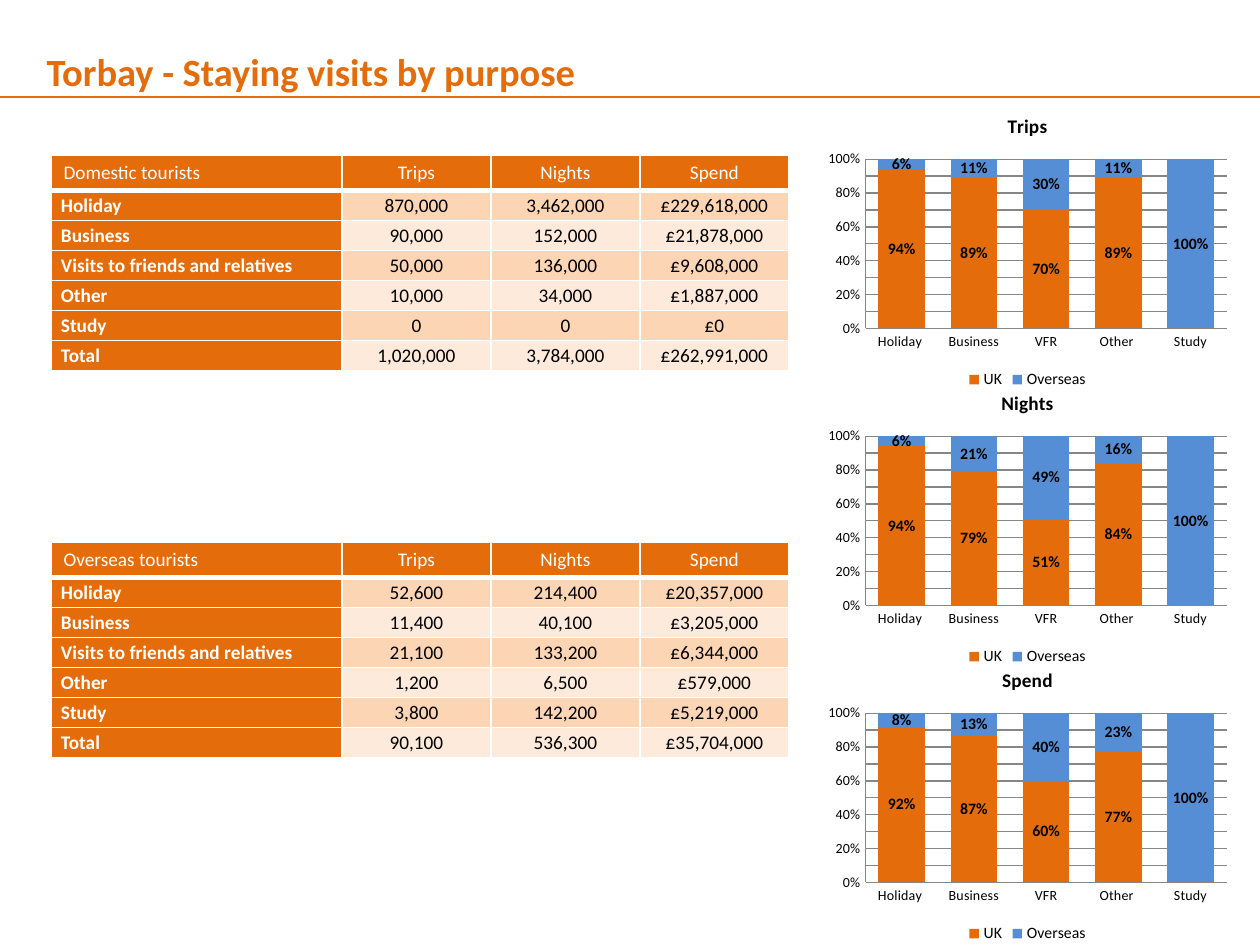
import dataclasses
import pptx
import pptx.chart.data
import pptx.dml.color
import pptx.enum.chart
import pptx.enum.shapes
import pptx.enum.text
import pptx.oxml
import pptx.oxml.ns
import pptx.util
from lxml import etree

SCALE = 914400 / 126


@dataclasses.dataclass(frozen=True)
class Theme:
    font: str = "Calibri"
    orange: str = "E46C0A"
    blue: str = "558ED5"
    peach: str = "FCD5B5"
    cream: str = "FDEADA"
    white: str = "FFFFFF"
    black: str = "000000"
    grey: str = "868686"
    title: int = 22
    body: int = 11
    label: int = 9
    axis: int = 8


THEME = Theme()
KINDS = ["Holiday", "Business", "Visits to friends and relatives",
         "Other", "Study", "Total"]
CATS = ["Holiday ", "Business", "VFR", "Other ", "Study"]
HOME = [("870,000", "3,462,000", "£229,618,000"),
        ("90,000", "152,000", "£21,878,000"),
        ("50,000", "136,000", "£9,608,000"),
        ("10,000", "34,000", "£1,887,000"),
        ("0", "0", "£0"),
        ("1,020,000", "3,784,000", "£262,991,000")]
ABROAD = [("52,600", "214,400", "£20,357,000"),
          ("11,400", "40,100", "£3,205,000"),
          ("21,100", "133,200", "£6,344,000"),
          ("1,200", "6,500", "£579,000"),
          ("3,800", "142,200", "£5,219,000"),
          ("90,100", "536,300", "£35,704,000")]
# UK share by purpose; overseas is the rest
SHARES = {"Trips": [0.94, 0.89, 0.7, 0.89, 0],
          "Nights": [0.94, 0.79, 0.51, 0.84, 0],
          "Spend": [0.92, 0.87, 0.6, 0.77, 0]}


def px(num):
    return pptx.util.Emu(round(num * SCALE))


def rgb(color):
    return pptx.dml.color.RGBColor.from_string(color)


def style(font, size, color=THEME.black, bold=False):
    font.name = THEME.font
    font.size = pptx.util.Pt(size)
    font.bold = bold
    font.color.rgb = rgb(color)


def add_title(slide, text):
    title = slide.shapes.title
    title.left, title.top, title.width, title.height = map(px, (34, 32, 1201, 69))
    frame = title.text_frame
    frame.text = text
    frame.word_wrap = True
    frame.auto_size = pptx.enum.text.MSO_AUTO_SIZE.SHAPE_TO_FIT_TEXT
    frame.vertical_anchor = pptx.enum.text.MSO_ANCHOR.TOP
    para = frame.paragraphs[0]
    para.alignment = pptx.enum.text.PP_ALIGN.LEFT
    para.line_spacing = 1.2
    style(para.runs[0].font, THEME.title, THEME.orange, True)


def add_rule(slide, y):
    line = slide.shapes.add_connector(
        pptx.enum.shapes.MSO_CONNECTOR.STRAIGHT, px(0), px(y), px(1260), px(y))
    line.line.color.rgb = rgb(THEME.orange)
    line.line.width = pptx.util.Pt(0.75)
    etree.SubElement(line._element.spPr, pptx.oxml.ns.qn("a:effectLst"))


def add_border(cell, head):
    props = cell._tc.get_or_add_tcPr()
    for spot, side in enumerate(("lnL", "lnR", "lnT", "lnB")):
        width = pptx.util.Pt(3 if head and side == "lnB" else 1)
        edge = etree.Element(pptx.oxml.ns.qn("a:" + side), w=str(width))
        fill = etree.SubElement(edge, pptx.oxml.ns.qn("a:solidFill"))
        etree.SubElement(fill, pptx.oxml.ns.qn("a:srgbClr"), val=THEME.white)
        props.insert(spot, edge)


def fill_cell(cell, text, row, col):
    head, side = row == 0, col == 0
    cell.text = text
    cell.vertical_anchor = pptx.enum.text.MSO_ANCHOR.MIDDLE
    if not head:
        cell.margin_left = px(10 if side else 1)
        cell.margin_right = cell.margin_top = px(1)
        cell.margin_bottom = 0
    para = cell.text_frame.paragraphs[0]
    if not side:
        para.alignment = pptx.enum.text.PP_ALIGN.CENTER
    solid = head or side
    style(para.runs[0].font, THEME.body,
          THEME.white if solid else THEME.black, side and not head)
    band = THEME.peach if row % 2 else THEME.cream
    cell.fill.solid()
    cell.fill.fore_color.rgb = rgb(THEME.orange if solid else band)
    add_border(cell, head)


def add_grid(slide, top, name, rows):
    data = [(name, *SHARES)] + [(kind, *row) for kind, row in zip(KINDS, rows)]
    grid = slide.shapes.add_table(
        len(data), 4, px(51), px(top), px(738), px(215)).table
    for col, width in zip(grid.columns, (291, 149, 149, 149)):
        col.width = px(width)
    for num, row in enumerate(data):
        grid.rows[num].height = px(30 if num else 35)
        for col, text in enumerate(row):
            fill_cell(grid.cell(num, col), text, num, col)


def set_axes(chart):
    for axis in (chart.category_axis, chart.value_axis):
        axis.major_tick_mark = pptx.enum.chart.XL_TICK_MARK.NONE
        axis.format.line.color.rgb = rgb(THEME.grey)
        style(axis.tick_labels.font, THEME.axis)
    axis = chart.value_axis
    axis.major_unit = 0.1
    axis.minimum_scale, axis.maximum_scale = 0, 1
    axis.tick_labels.number_format = "0%"
    axis.tick_labels.number_format_is_linked = False
    axis.major_gridlines.format.line.color.rgb = rgb(THEME.grey)


def set_series(series, color):
    series.format.fill.solid()
    series.format.fill.fore_color.rgb = rgb(color)
    labels = series.data_labels
    labels.show_value = True
    labels.number_format = "0%"
    labels.number_format_is_linked = False
    style(labels.font, THEME.label, bold=True)
    # An empty share carries no label
    for spot, value in enumerate(series.values):
        if value == 0:
            labels._element.insert(0, pptx.oxml.parse_xml(
                f'<c:dLbl {pptx.oxml.ns.nsdecls("c")}><c:idx val="{spot}"/>'
                '<c:delete val="1"/></c:dLbl>'))


def add_bars(slide, top, name, shares):
    data = pptx.chart.data.CategoryChartData(number_format="0%")
    data.categories = CATS
    data.add_series("UK", shares)
    data.add_series("Overseas", [round(1 - share, 2) for share in shares])
    chart = slide.shapes.add_chart(
        pptx.enum.chart.XL_CHART_TYPE.COLUMN_STACKED_100,
        px(820), px(top), px(415), px(297), data).chart
    style(chart.font, 18)
    chart.has_title = True
    frame = chart.chart_title.text_frame
    frame.text = name
    style(frame.paragraphs[0].runs[0].font, THEME.body, bold=True)
    chart.has_legend = True
    chart.legend.position = pptx.enum.chart.XL_LEGEND_POSITION.BOTTOM
    chart.legend.include_in_layout = False
    style(chart.legend.font, THEME.label)
    set_axes(chart)
    plot = chart.plots[0]
    plot.gap_width, plot.overlap = 55, 100
    plot.vary_by_categories = False
    for series, color in zip(plot.series, (THEME.orange, THEME.blue)):
        set_series(series, color)


def main():
    deck = pptx.Presentation()
    deck.slide_width, deck.slide_height = px(1260), px(945)
    slide = deck.slides.add_slide(deck.slide_layouts[5])
    # Heading
    add_title(slide, "Torbay - Staying visits by purpose")
    add_rule(slide, 97)
    # Visitor tables
    add_grid(slide, 155, "Domestic tourists", HOME)
    add_grid(slide, 542, "Overseas tourists", ABROAD)
    # Share charts
    for num, (name, shares) in enumerate(SHARES.items()):
        add_bars(slide, 97 + 277 * num, name, shares)
    deck.save("out.pptx")


if __name__ == "__main__":
    main()
